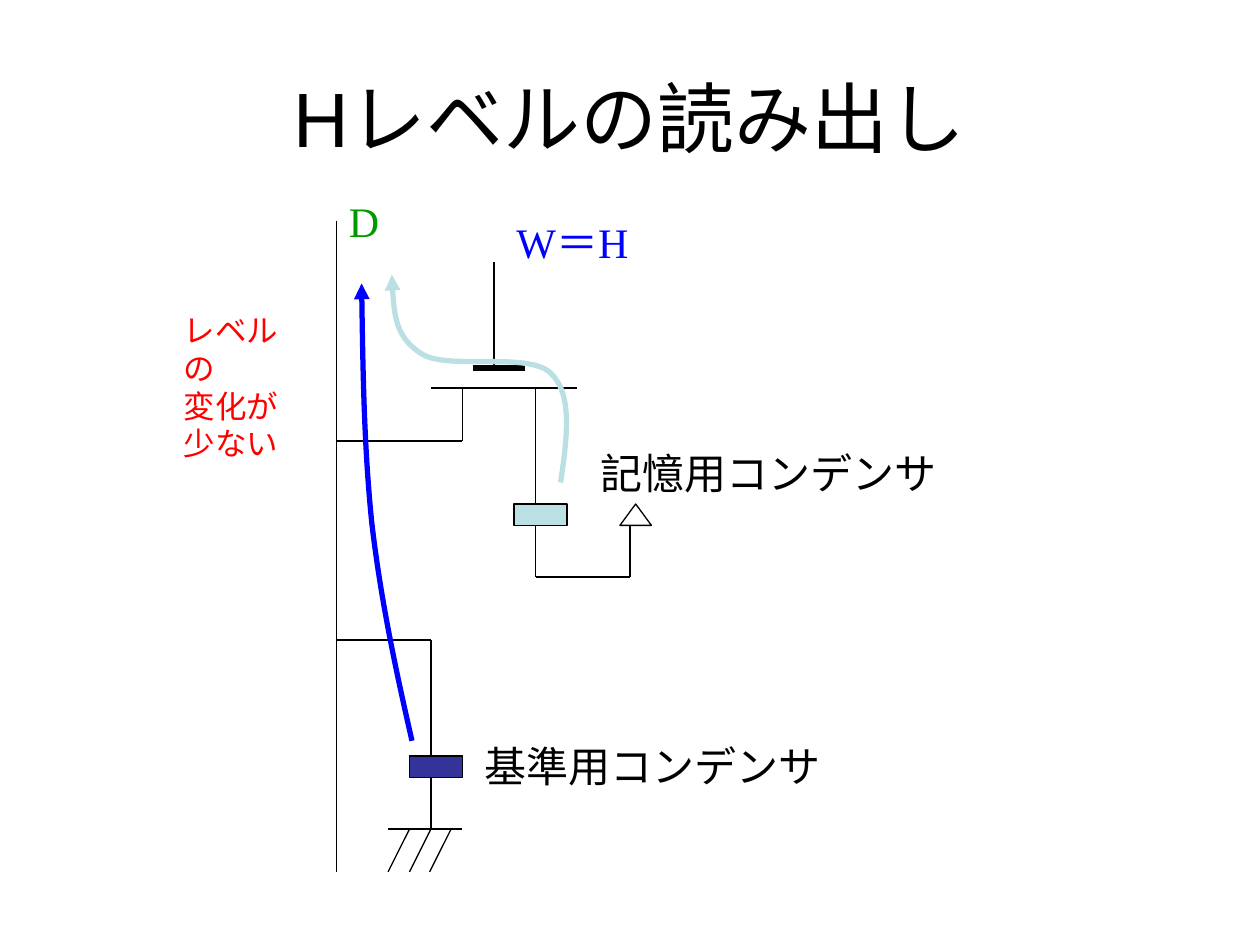
import lxml.etree
import pptx
import pptx.util
import pptx.dml.color
import pptx.enum.shapes
import pptx.enum.text
import pptx.oxml.ns
from pptx.util import Inches

RGBColor = pptx.dml.color.RGBColor
BLACK = RGBColor(0x00, 0x00, 0x00)
BLUE = RGBColor(0x00, 0x00, 0xFF)
GREEN = RGBColor(0x00, 0x99, 0x00)
RED = RGBColor(0xFF, 0x00, 0x00)
PALE_TEAL = RGBColor(0xBB, 0xE0, 0xE3)
INDIGO = RGBColor(0x33, 0x33, 0x99)

MSO_SHAPE = pptx.enum.shapes.MSO_SHAPE
qn = pptx.oxml.ns.qn

presentation = pptx.Presentation()
presentation.slide_width = Inches(10)
presentation.slide_height = Inches(7.5)
slide = presentation.slides.add_slide(presentation.slide_layouts[6])
shapes = slide.shapes


def add_wire(start, end, width=0.75):
    wire = shapes.add_connector(
        pptx.enum.shapes.MSO_CONNECTOR.STRAIGHT,
        *(Inches(value) for value in (*start, *end)))
    wire.line.color.rgb = BLACK
    wire.line.width = pptx.util.Pt(width)
    lxml.etree.SubElement(wire._element.spPr, qn("a:effectLst"))


def add_text(box, lines, size, font_name, color, centered=False):
    text_box = shapes.add_textbox(*(Inches(value) for value in box))
    frame = text_box.text_frame
    frame.word_wrap = True
    if centered:
        frame.vertical_anchor = pptx.enum.text.MSO_ANCHOR.MIDDLE
    font_format = {"size": pptx.util.Pt(size), "name": font_name}
    for index, line in enumerate(lines):
        paragraph = frame.paragraphs[0] if index == 0 else frame.add_paragraph()
        if centered:
            paragraph.alignment = pptx.enum.text.PP_ALIGN.CENTER
        run = paragraph.add_run()
        run.text = line
        for name, value in font_format.items():
            setattr(run.font, name, value)
        run.font.color.rgb = color


# Title
add_text((0.5, 0.3, 9, 1.25), ["Hレベルの読み出し"], 44, "Arial", BLACK, centered=True)

# Circuit wires, each a chain of corner points
wire_chains = [
    [(2.67, 1.75), (2.67, 6.92)],                # data line
    [(2.67, 3.5), (3.67, 3.5), (3.67, 3.08)],    # data line to transistor
    [(3.42, 3.08), (4.58, 3.08)],                # transistor channel
    [(4.25, 3.08), (4.25, 4)],                   # transistor to storage capacitor
    [(4.25, 4.17), (4.25, 4.58), (5, 4.58), (5, 4.17)],
    [(3.92, 2.92), (3.92, 2.08)],                # word line
    [(2.67, 5.08), (3.42, 5.08), (3.42, 6)],     # data line to reference capacitor
    [(3.42, 6.17), (3.42, 6.58)],
    [(3.08, 6.58), (3.67, 6.58)],                # ground bar
]
for chain in wire_chains:
    for start, end in zip(chain, chain[1:]):
        add_wire(start, end)

# Ground hatching and transistor gate
for ground_x in (3.25, 3.42, 3.58):
    add_wire((ground_x, 6.58), (ground_x - 0.17, 6.92))
add_wire((3.75, 2.92), (4.17, 2.92), width=3)

# Plate terminal and the two capacitors, with their electrode lines
for shape_type, box, fill_color in [
    (MSO_SHAPE.ISOSCELES_TRIANGLE, (4.92, 4, 0.25, 0.17), None),
    (MSO_SHAPE.RECTANGLE, (4.08, 4, 0.42, 0.17), PALE_TEAL),
    (MSO_SHAPE.RECTANGLE, (3.25, 6, 0.42, 0.17), INDIGO),
]:
    left, top, width, height = box
    if fill_color is not None:
        for electrode_y in (top, top + height):
            add_wire((left, electrode_y), (left + width, electrode_y))
    shape = shapes.add_shape(shape_type, *(Inches(value) for value in box))
    shape.shadow.inherit = False
    shape.line.color.rgb = BLACK
    shape.line.width = pptx.util.Pt(0.75)
    if fill_color is None:
        shape.fill.background()
    else:
        shape.fill.solid()
        shape.fill.fore_color.rgb = fill_color

# Labels
for box, label, color in [
    ((4, 1.67, 1.92, 0.5), "W＝H", BLUE),
    ((2.67, 1.5, 1.33, 0.5), "D", GREEN),
    ((4.67, 3.5, 3, 0.5), "記憶用コンデンサ", BLACK),
    ((3.75, 5.83, 3.42, 0.5), "基準用コンデンサ", BLACK),
]:
    add_text(box, [label], 24, "Times New Roman", color)

# Charge flow arrows: a start point, then three Bezier points per segment
for color, points in [
    (PALE_TEAL, [(4.45, 3.83),
                 (4.5, 3.48), (4.55, 3.13), (4.37, 2.96),
                 (4.19, 2.79), (3.56, 2.94), (3.35, 2.81),
                 (3.14, 2.68), (3.12, 2.43), (3.11, 2.18)]),
    (BLUE, [(3.27, 5.88),
            (3.14, 5.31), (3.02, 4.75), (2.95, 4.14),
            (2.89, 3.54), (2.88, 2.9), (2.87, 2.25)]),
]:
    corners = [(Inches(x), Inches(y)) for x, y in points]
    builder = shapes.build_freeform(*corners[0])
    builder.add_line_segments(corners[1:], close=False)
    arrow = builder.convert_to_shape()
    arrow.shadow.inherit = False
    arrow.fill.background()
    arrow.line.color.rgb = color
    arrow.line.width = pptx.util.Pt(3)
    # Turn each three straight segments into one cubic curve
    segments = list(arrow._element.iter(qn("a:lnTo")))
    for first in range(0, len(segments), 3):
        curve = lxml.etree.Element(qn("a:cubicBezTo"))
        segments[first].addprevious(curve)
        for segment in segments[first:first + 3]:
            curve.append(segment[0])
            segment.getparent().remove(segment)
    outline = arrow._element.spPr.find(qn("a:ln"))
    lxml.etree.SubElement(outline, qn("a:tailEnd"), type="triangle")

# Remark beside the data line
add_text((1.36, 2.42, 1.15, 1), ["レベルの", "変化が", "少ない"], 18, "Times New Roman", RED)

presentation.save("out.pptx")
